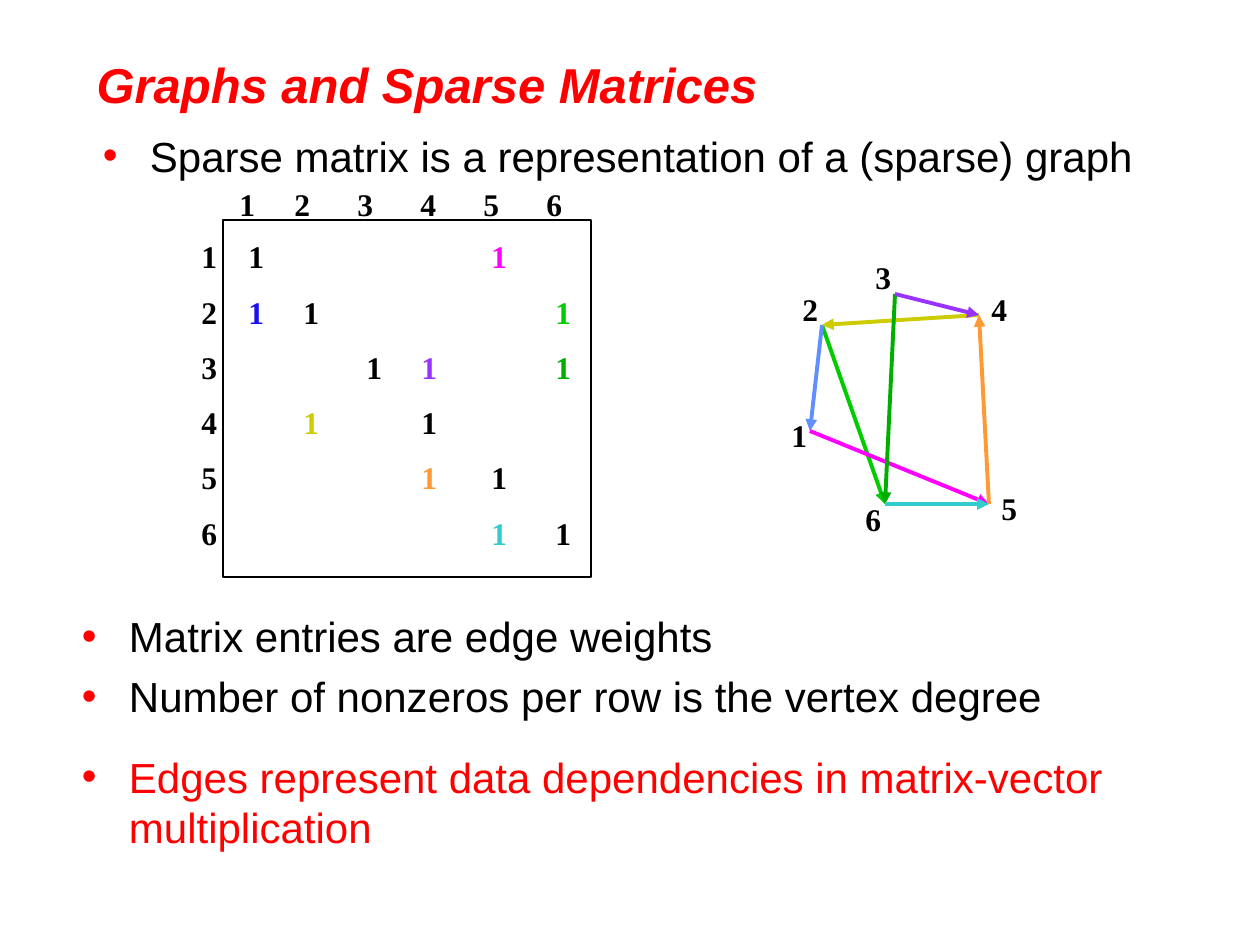
from dataclasses import dataclass
from typing import Sequence

from lxml.etree import SubElement
from pptx import Presentation
from pptx.dml.color import RGBColor
from pptx.enum.shapes import MSO_CONNECTOR, MSO_SHAPE
from pptx.enum.text import MSO_ANCHOR, PP_ALIGN
from pptx.oxml.ns import qn
from pptx.util import Pt

EMU_PER_PX = 914400 / 126
BLACK, RED = "000000", "FF0000"
SANS, SERIF = "Arial", "Times New Roman"
SIZE = 6


@dataclass(frozen=True)
class Vertex:
    """A graph vertex: the point where edges meet and its label's corner."""
    x: int
    y: int
    label_x: int
    label_y: int


@dataclass(frozen=True)
class Edge:
    """A directed edge, which is also the matrix entry (source, target)."""
    source: int
    target: int
    color: str
    entry_color: str = ""


@dataclass(frozen=True)
class Bullet:
    text: str
    color: str = BLACK
    space_before: float = 0


VERTICES = {
    3: Vertex(895, 294, 863, 252),
    6: Vertex(885, 504, 853, 494),
    2: Vertex(822, 325, 790, 284),
    1: Vertex(810, 431, 779, 410),
    5: Vertex(989, 504, 989, 483),
    4: Vertex(979, 315, 979, 284),
}
EDGES = [
    Edge(2, 6, "00CC00"),
    Edge(2, 1, "618FFD", "1A0FEF"),
    Edge(4, 2, "CCCC00"),
    Edge(1, 5, "FF00FF"),
    Edge(5, 4, "FF9933"),
    Edge(3, 6, "00AE00"),
    Edge(3, 4, "9933FF"),
    Edge(6, 5, "33CCCC"),
]
HEADER_TABS = [15 + 55 * (column > 0) + 63 * max(column - 1, 0) for column in range(SIZE)]
ENTRY_TABS = [47, 102, 165, 220, 290, 354]


def px(length: float) -> int:
    return round(length * EMU_PER_PX)


def rgb(color: str) -> RGBColor:
    return RGBColor.from_string(color)


def add_run(paragraph, text: str, *, size: int = 18, font: str = SERIF,
            color: str = BLACK, bold: bool = True, italic: bool = False) -> None:
    run = paragraph.add_run()
    run.text = text
    run.font.size = Pt(size)
    run.font.name = font
    run.font.bold = bold
    run.font.italic = italic
    run.font.color.rgb = rgb(color)


def add_text_frame(slide, left: int, top: int, width: int, height: int):
    frame = slide.shapes.add_textbox(px(left), px(top), px(width), px(height)).text_frame
    frame.word_wrap = True
    return frame


def next_paragraph(frame, index: int):
    return frame.add_paragraph() if index else frame.paragraphs[0]


def set_tabs(paragraph, stops: Sequence[int]) -> None:
    tab_list = SubElement(paragraph._p.get_or_add_pPr(), qn("a:tabLst"))
    for stop in stops:
        SubElement(tab_list, qn("a:tab"), pos=str(px(stop)), algn="l")


def set_bullet(paragraph, color: str, indent: int) -> None:
    properties = paragraph._p.get_or_add_pPr()
    properties.set("marL", str(px(indent)))
    properties.set("indent", str(-px(indent)))
    bullet_color = SubElement(properties, qn("a:buClr"))
    SubElement(bullet_color, qn("a:srgbClr"), val=color)
    SubElement(properties, qn("a:buFont"), typeface=SANS)
    SubElement(properties, qn("a:buChar"), char="•")


def add_title(slide, text: str) -> None:
    title = slide.shapes.title
    title.left, title.top, title.width, title.height = px(84), px(42), px(1032), px(84)
    frame = title.text_frame
    frame.vertical_anchor = MSO_ANCHOR.MIDDLE
    paragraph = frame.paragraphs[0]
    paragraph.alignment = PP_ALIGN.LEFT
    add_run(paragraph, text, size=28, font=SANS, color=RED, italic=True)


def add_bullets(slide, left: int, top: int, width: int, height: int,
                bullets: Sequence[Bullet]) -> None:
    frame = add_text_frame(slide, left, top, width, height)
    frame.margin_left = frame.margin_right = px(9)
    frame.margin_top = frame.margin_bottom = px(4)
    for index, bullet in enumerate(bullets):
        paragraph = next_paragraph(frame, index)
        paragraph.space_before = Pt(bullet.space_before)
        set_bullet(paragraph, RED, indent=47)
        add_run(paragraph, bullet.text, size=24, font=SANS, color=bullet.color, bold=False)


def add_matrix(slide) -> None:
    border = slide.shapes.add_shape(MSO_SHAPE.RECTANGLE, px(223), px(220), px(368), px(357))
    border.shadow.inherit = False
    border.fill.background()
    border.line.color.rgb = rgb(BLACK)
    border.line.width = Pt(1)

    entries = {(edge.source, edge.target): edge.entry_color or edge.color for edge in EDGES}
    entries |= {(vertex, vertex): BLACK for vertex in VERTICES}
    frame = add_text_frame(slide, 189, 231, 401, 335)
    for row in range(1, SIZE + 1):
        paragraph = next_paragraph(frame, row - 1)
        paragraph.space_before = Pt(10 if row > 1 else 0)
        set_tabs(paragraph, ENTRY_TABS)
        add_run(paragraph, str(row))
        previous = 0
        for column in range(1, SIZE + 1):
            if (row, column) in entries:
                add_run(paragraph, "\t" * (column - previous) + "1", color=entries[row, column])
                previous = column

    header = add_text_frame(slide, 212, 179, 399, 50).paragraphs[0]
    set_tabs(header, HEADER_TABS)
    add_run(header, "".join(f"\t{column}" for column in range(1, SIZE + 1)))


def add_edge(slide, edge: Edge) -> None:
    start, end = VERTICES[edge.source], VERTICES[edge.target]
    connector = slide.shapes.add_connector(
        MSO_CONNECTOR.STRAIGHT, px(start.x), px(start.y), px(end.x), px(end.y))
    connector.line.color.rgb = rgb(edge.color)
    connector.line.width = Pt(2.25)
    SubElement(connector.line._get_or_add_ln(), qn("a:tailEnd"), type="triangle")
    SubElement(connector._element.spPr, qn("a:effectLst"))


def add_graph(slide) -> None:
    for name, vertex in VERTICES.items():
        frame = add_text_frame(slide, vertex.label_x, vertex.label_y, 32, 50)
        add_run(frame.paragraphs[0], str(name))
    for edge in EDGES:
        add_edge(slide, edge)


def main() -> None:
    presentation = Presentation()
    presentation.slide_width, presentation.slide_height = px(1260), px(945)
    slide = presentation.slides.add_slide(presentation.slide_layouts[5])
    add_title(slide, "Graphs and Sparse Matrices")
    add_matrix(slide)
    add_graph(slide)
    add_bullets(slide, 94, 126, 1134, 57, [
        Bullet("Sparse matrix is a representation of a (sparse) graph"),
    ])
    add_bullets(slide, 73, 607, 1155, 251, [
        Bullet("Matrix entries are edge weights"),
        Bullet("Number of nonzeros per row is the vertex degree", space_before=5.5),
        Bullet("Edges represent data dependencies in matrix-vector multiplication",
               color=RED, space_before=17),
    ])
    presentation.save("out.pptx")


if __name__ == "__main__":
    main()
